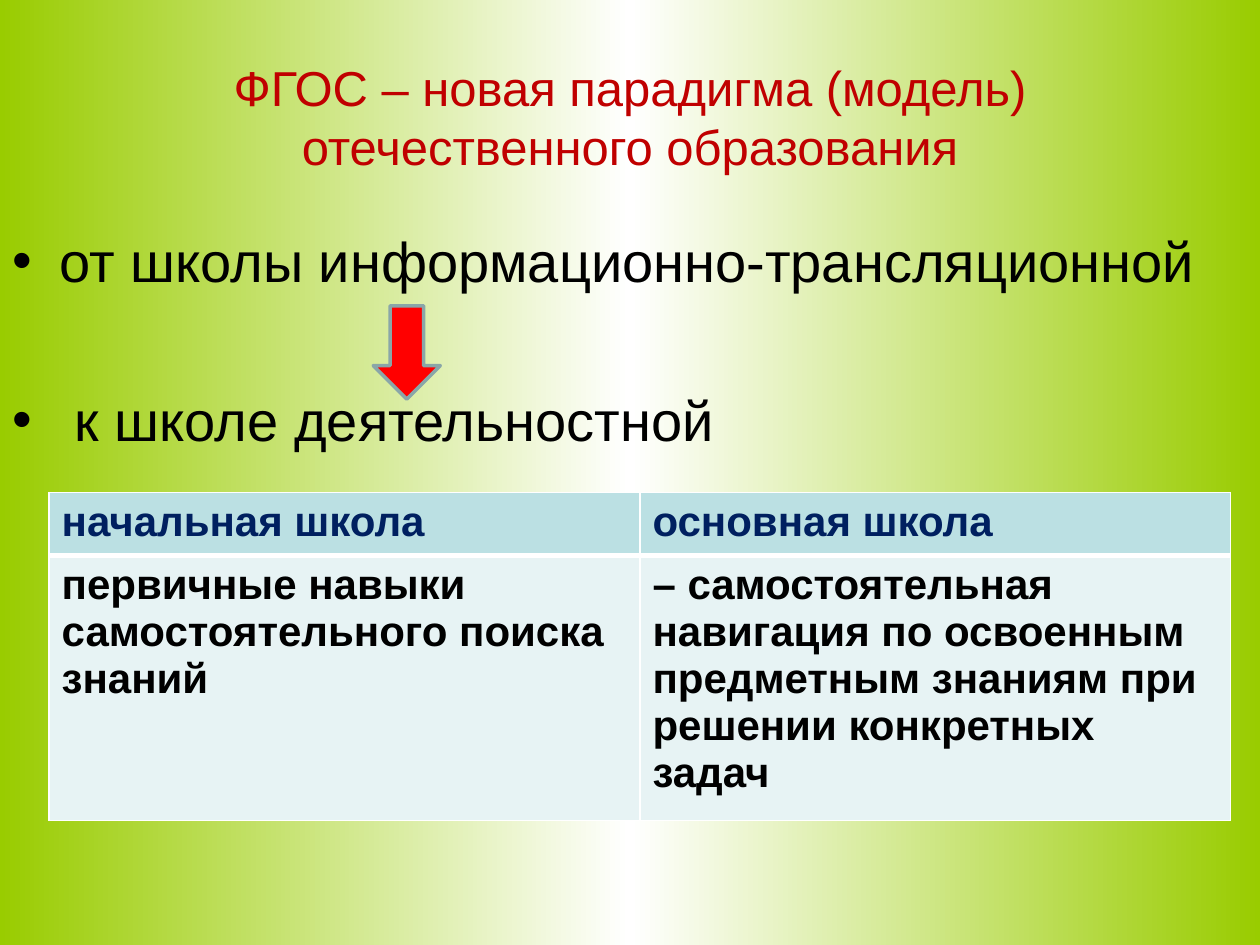
import copy

import pptx
import pptx.dml.color
import pptx.enum.shapes
import pptx.enum.text
import pptx.oxml
import pptx.oxml.ns
import pptx.util

Cm, Pt = pptx.util.Cm, pptx.util.Pt
NAMESPACE = pptx.oxml.ns.nsdecls("a")


def paint(color_format, hex_color):
    color_format.rgb = pptx.dml.color.RGBColor.from_string(hex_color)


def write(paragraph, text, hex_color, paragraph_format, font_format):
    """Add text as one run and apply both dicts of format values."""
    run = paragraph.add_run()
    run.text = text
    for target, values in ((paragraph, paragraph_format), (run.font, font_format)):
        for name, value in values.items():
            setattr(target, name, value)
    paint(run.font.color, hex_color)


presentation = pptx.Presentation()
presentation.slide_width, presentation.slide_height = Cm(25.4), Cm(19.05)
slide = presentation.slides.add_slide(presentation.slide_layouts[6])

# Background: green edges fading to a white middle
background = slide.background.fill
background.gradient()
background.gradient_angle = 0
for stop, hex_color in zip(background.gradient_stops, ("99CC00", "FFFFFF")):
    paint(stop.color, hex_color)
left_edge, middle = slide.element.xpath(".//a:gs")
right_edge = copy.deepcopy(left_edge)
middle.addnext(right_edge)
for stop, position in ((left_edge, 0), (middle, 50000), (right_edge, 100000)):
    stop.set("pos", str(position))

# Title
heading = slide.shapes.add_textbox(Cm(1.27), Cm(0.76), Cm(22.86), Cm(3.18)).text_frame
heading.word_wrap = True
heading.vertical_anchor = pptx.enum.text.MSO_ANCHOR.MIDDLE
write(heading.paragraphs[0], "ФГОС – новая парадигма (модель) отечественного образования",
      "C00000", {"alignment": pptx.enum.text.PP_ALIGN.CENTER},
      {"name": "Arial", "size": Pt(28)})

# The two school models, with room for the arrow between them
models = slide.shapes.add_textbox(0, Cm(4.45), Cm(25.4), Cm(12.57)).text_frame
models.word_wrap = True
model_lines = (("от школы информационно-трансляционной", 6),
               (" к школе деятельностной", 52))
for index, (text, gap) in enumerate(model_lines):
    line = models.add_paragraph() if index else models.paragraphs[0]
    write(line, text, "000000", {"space_before": Pt(gap)},
          {"name": "Arial", "size": Pt(32)})
    properties = line._p.get_or_add_pPr()
    properties.set("marL", str(Cm(0.95)))
    properties.set("indent", str(-Cm(0.95)))
    for bullet in ('<a:buFont {} typeface="Arial"/>', '<a:buChar {} char="•"/>'):
        properties.append(pptx.oxml.parse_xml(bullet.format(NAMESPACE)))

# Comparison of school levels
levels = (
    ("начальная школа", "основная школа"),
    ("первичные навыки самостоятельного поиска знаний",
     "– самостоятельная навигация по освоенным предметным знаниям "
     "при решении конкретных задач"),
)
row_styles = (
    {"height": Cm(1.19), "fill": "BBE0E3", "text": "002060", "top": 1, "bottom": 3},
    {"height": Cm(4.98), "fill": "E7F3F4", "text": "000000", "top": 3, "bottom": 1},
)
comparison = slide.shapes.add_table(2, 2, Cm(0.99), Cm(9.93), Cm(23.82), Cm(6.17)).table
for row, texts, style in zip(comparison.rows, levels, row_styles):
    row.height = style["height"]
    borders = {"lnL": 1, "lnR": 1, "lnT": style["top"], "lnB": style["bottom"]}
    for cell, text in zip(row.cells, texts):
        write(cell.text_frame.paragraphs[0], text, style["text"], {},
              {"name": "Arial", "size": Pt(24), "bold": True})
        for side, width in borders.items():
            cell._tc.get_or_add_tcPr().append(pptx.oxml.parse_xml(
                f'<a:{side} {NAMESPACE} w="{Pt(width)}"><a:solidFill>'
                f'<a:srgbClr val="FFFFFF"/></a:solidFill></a:{side}>'))
        cell.fill.solid()
        paint(cell.fill.fore_color, style["fill"])

# Arrow from the old model to the new one
transition = slide.shapes.add_shape(pptx.enum.shapes.MSO_SHAPE.RIGHT_ARROW,
                                    Cm(7.26), Cm(6.43), Cm(1.88), Cm(1.35))
transition.rotation = 90
transition.shadow.inherit = False
transition.fill.solid()
paint(transition.fill.fore_color, "FF0000")
paint(transition.line.color, "8AA6A8")
transition.line.width = Pt(2)

presentation.save("out.pptx")
